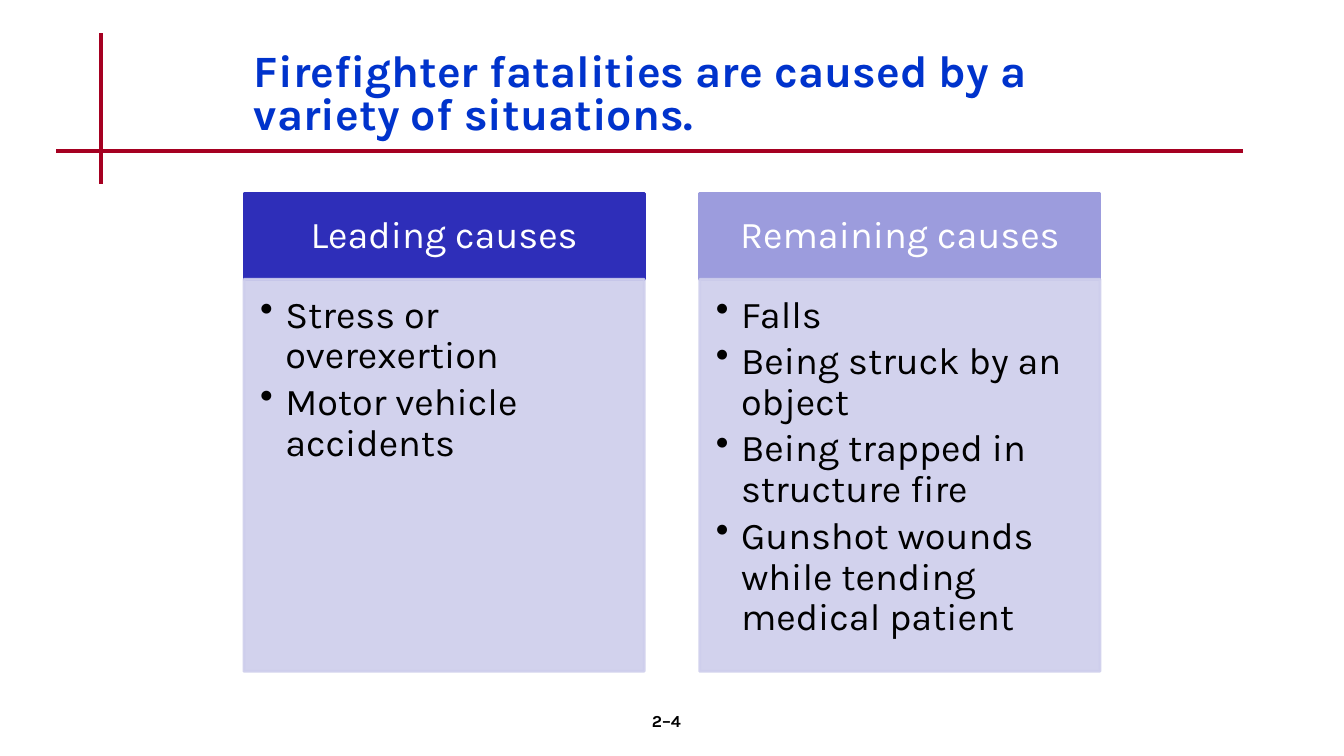
import pptx
import pptx.util
import pptx.dml.color
import pptx.enum.shapes
import pptx.enum.text
import pptx.oxml.ns
from lxml import etree

TITLE = "Firefighter fatalities are caused by a variety of situations."
NUMBER = "2–4"
CARDS = [
    ("Leading causes", "indigo",
     ["Stress or overexertion", "Motor vehicle accidents"]),
    ("Remaining causes", "lilac",
     ["Falls", "Being struck by an object", "Being trapped in structure fire",
      "Gunshot wounds while tending medical patient"]),
]
RULES = [(1, 0.33, 1, 1.83), (0.56, 1.5, 12.33, 1.5)]

COLORS = {"red": "A50021", "blue": "0033CC", "indigo": "2E2EB9",
          "lilac": "9C9CDD", "pale": "CECEEC", "white": "FFFFFF",
          "black": "000000"}
FONT = "Karla"
WIDE, HIGH = 13.33, 7.5
LEFT, TOP = 2.42, 1.92
CARD, STEP = 3.97, 4.52
HEAD, BODY = 0.85, 3.89

Inch, Pt = pptx.util.Inches, pptx.util.Pt
Align = pptx.enum.text.PP_ALIGN
Anchor = pptx.enum.text.MSO_ANCHOR
qn = pptx.oxml.ns.qn


def tint(name):
    return pptx.dml.color.RGBColor.from_string(COLORS[name])


def fade(shape, share):
    """Make the fill and line of a shape partly opaque."""
    for color in shape._element.spPr.iter(qn("a:srgbClr")):
        etree.SubElement(color, qn("a:alpha"), val=str(share * 1000))


def write(shape, lines, size, color, bold=False, align=Align.LEFT,
          anchor=Anchor.TOP, inset=(0.1, 0.05, 0.1, 0.05), space=1.0,
          after=0, bullet=False):
    frame = shape.text_frame
    frame.word_wrap = True
    frame.vertical_anchor = anchor
    (frame.margin_left, frame.margin_top,
     frame.margin_right, frame.margin_bottom) = map(Inch, inset)
    frame.text = "\n".join(lines)
    for para in frame.paragraphs:
        if bullet:
            props = para._p.get_or_add_pPr()
            props.set("marL", str(Inch(0.25)))
            props.set("indent", str(Inch(-0.25)))
            etree.SubElement(props, qn("a:buChar"), char="•")
        para.alignment = align
        para.line_spacing = space
        para.space_after = Pt(after)
        font = para.font
        font.name, font.size, font.bold = FONT, Pt(size), bold
        font.color.rgb = tint(color)


def block(slide, left, top, height, color):
    shape = slide.shapes.add_shape(
        pptx.enum.shapes.MSO_SHAPE.RECTANGLE,
        Inch(left), Inch(top), Inch(CARD), Inch(height))
    shape.shadow.inherit = False
    shape.fill.solid()
    shape.fill.fore_color.rgb = tint(color)
    shape.line.color.rgb = tint(color)
    shape.line.width = Pt(2)
    return shape


def main():
    deck = pptx.Presentation()
    deck.slide_width, deck.slide_height = Inch(WIDE), Inch(HIGH)
    slide = deck.slides.add_slide(deck.slide_layouts[6])

    for ends in RULES:
        rule = slide.shapes.add_connector(
            pptx.enum.shapes.MSO_CONNECTOR.STRAIGHT, *map(Inch, ends))
        rule.line.color.rgb = tint("red")
        rule.line.width = Pt(3)
        etree.SubElement(rule._element.spPr, qn("a:effectLst"))

    for col, (name, color, causes) in enumerate(CARDS):
        left = LEFT + col * STEP
        head = block(slide, left, TOP, HEAD, color)
        write(head, [name], 27, "white", align=Align.CENTER,
              anchor=Anchor.MIDDLE, inset=(0.21, 0.12, 0.21, 0.12), space=0.9)
        body = block(slide, left, TOP + HEAD, BODY, "pale")
        fade(body, 90)
        write(body, causes, 27, "black", inset=(0.16, 0.16, 0.21, 0.24),
              space=0.9, after=4, bullet=True)

    title = slide.shapes.add_textbox(
        Inch(LEFT), Inch(0.33), Inch(8.5), Inch(1.25))
    write(title, [TITLE], 32, "blue", bold=True, anchor=Anchor.MIDDLE,
          space=0.8)
    foot = slide.shapes.add_textbox(
        Inch(5.22), Inch(7), Inch(2.78), Inch(0.5))
    write(foot, [NUMBER], 12, "black", bold=True, align=Align.CENTER)

    deck.save("out.pptx")


if __name__ == "__main__":
    main()
